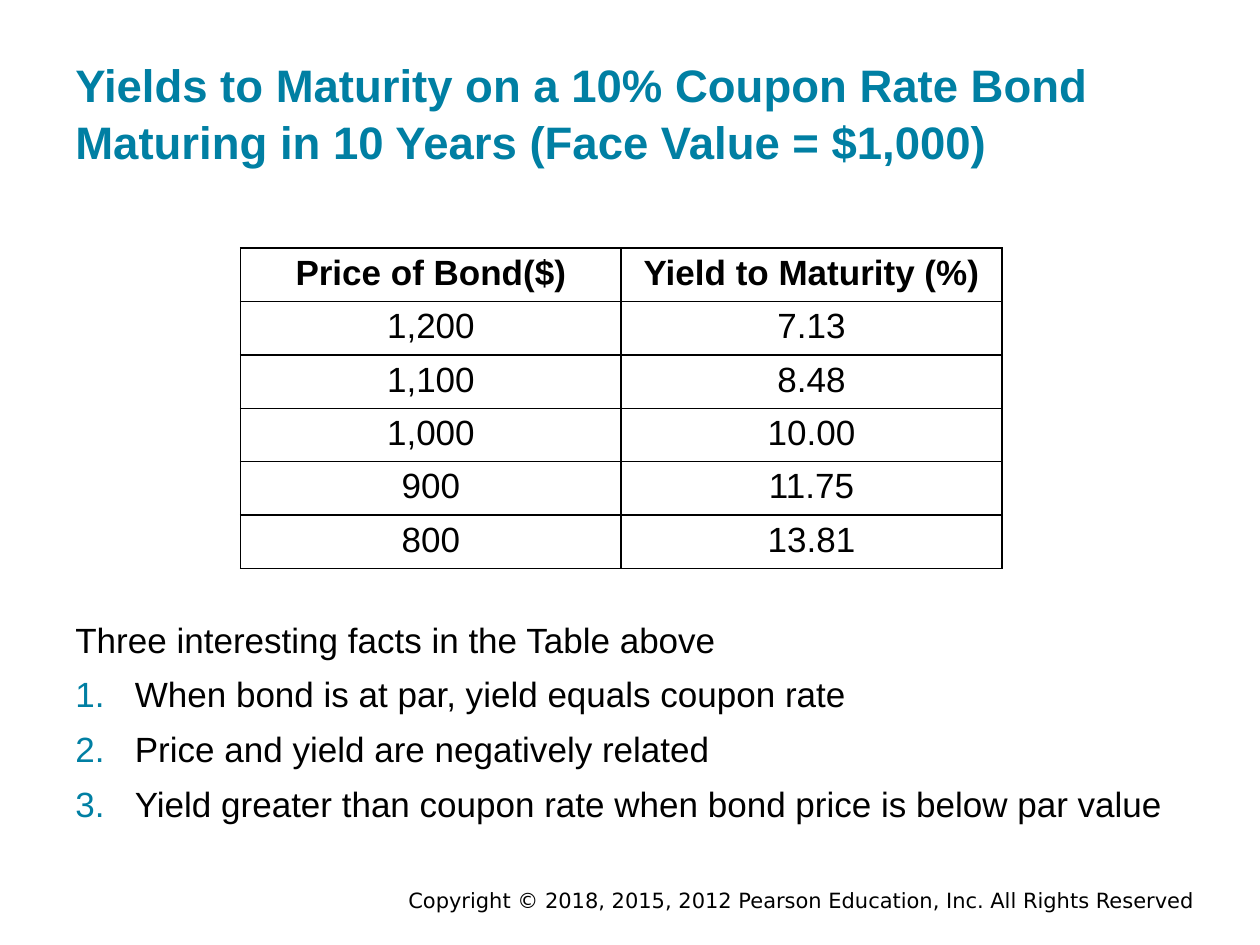
from dataclasses import dataclass

from lxml import etree
from pptx import Presentation
from pptx.dml.color import RGBColor
from pptx.enum.text import MSO_ANCHOR, PP_ALIGN
from pptx.oxml.ns import qn
from pptx.util import Pt

LEFT, CENTER, RIGHT = PP_ALIGN.LEFT, PP_ALIGN.CENTER, PP_ALIGN.RIGHT
TOP, MIDDLE, BOTTOM = MSO_ANCHOR.TOP, MSO_ANCHOR.MIDDLE, MSO_ANCHOR.BOTTOM


@dataclass(frozen=True)
class Theme:
    accent: str = "007FA3"
    ink: str = "000000"
    paper: str = "FFFFFF"
    font: str = "Arial"
    footer_font: str = "DejaVu Sans"
    title_size: int = 26
    body_size: int = 20
    footer_size: int = 12
    line_spacing: float = 1.05


class SlideBuilder:
    def __init__(self, slide, theme):
        self.slide = slide
        self.theme = theme

    def add_run(self, paragraph, text, size, color=None, bold=False, font=None):
        run = paragraph.add_run()
        run.text = text
        run.font.name = font or self.theme.font
        run.font.size = Pt(size)
        run.font.bold = bold
        run.font.color.rgb = RGBColor.from_string(color or self.theme.ink)

    def text_frame(self, box, anchor, inset):
        frame = self.slide.shapes.add_textbox(*map(Pt, box)).text_frame
        frame.word_wrap = True
        frame.vertical_anchor = anchor
        frame.margin_left = frame.margin_right = Pt(7.2)
        frame.margin_top = frame.margin_bottom = Pt(inset)
        return frame

    def title(self, text, box):
        paragraph = self.text_frame(box, BOTTOM, 7.2).paragraphs[0]
        paragraph.alignment = LEFT
        paragraph.line_spacing = self.theme.line_spacing
        self.add_run(paragraph, text, self.theme.title_size, self.theme.accent, True)

    def footer(self, text, box):
        paragraph = self.text_frame(box, MIDDLE, 3.6).paragraphs[0]
        paragraph.alignment = RIGHT
        self.add_run(paragraph, text, self.theme.footer_size, font=self.theme.footer_font)

    def numbered_list(self, lead, items, box):
        frame = self.text_frame(box, TOP, 7.2)
        for index, text in enumerate([lead, *items]):
            paragraph = frame.add_paragraph() if index else frame.paragraphs[0]
            paragraph.line_spacing = self.theme.line_spacing
            if index:
                paragraph.space_before = Pt(6)
                self.number(paragraph)
            self.add_run(paragraph, text, self.theme.body_size)

    def number(self, paragraph):
        properties = paragraph._p.get_or_add_pPr()
        properties.set("marL", str(Pt(34)))
        properties.set("indent", str(Pt(-34)))
        color = etree.SubElement(properties, qn("a:buClr"))
        etree.SubElement(color, qn("a:srgbClr"), val=self.theme.accent)
        etree.SubElement(properties, qn("a:buFont"), typeface=self.theme.font)
        etree.SubElement(properties, qn("a:buAutoNum"), type="arabicPeriod")

    def table(self, rows, left, top, column_width, row_height):
        columns = len(rows[0])
        table = self.slide.shapes.add_table(
            len(rows), columns, Pt(left), Pt(top),
            Pt(column_width * columns), Pt(row_height * len(rows))).table
        for column in table.columns:
            column.width = Pt(column_width)
        for row_index, values in enumerate(rows):
            for column_index, value in enumerate(values):
                self.cell(table.cell(row_index, column_index), value, row_index == 0)

    def cell(self, cell, text, bold):
        cell.margin_left = cell.margin_right = Pt(5)
        cell.margin_top = cell.margin_bottom = Pt(3.25)
        paragraph = cell.text_frame.paragraphs[0]
        paragraph.alignment = CENTER
        self.add_run(paragraph, text, self.theme.body_size, bold=bold)
        properties = cell._tc.get_or_add_tcPr()
        for side in ("a:lnL", "a:lnR", "a:lnT", "a:lnB"):
            line = etree.SubElement(properties, qn(side), w=str(Pt(1)))
            fill = etree.SubElement(line, qn("a:solidFill"))
            etree.SubElement(fill, qn("a:srgbClr"), val=self.theme.ink)
        cell.fill.solid()
        cell.fill.fore_color.rgb = RGBColor.from_string(self.theme.paper)


def main():
    presentation = Presentation()
    presentation.slide_width, presentation.slide_height = Pt(720), Pt(540)
    slide = presentation.slides.add_slide(presentation.slide_layouts[6])
    builder = SlideBuilder(slide, Theme())

    builder.footer(
        "Copyright © 2018, 2015, 2012 Pearson Education, Inc. All Rights Reserved",
        (126, 506.2, 563.8, 15.8))
    builder.title(
        "Yields to Maturity on a 10% Coupon Rate Bond "
        "Maturing in 10 Years (Face Value = $1,000)",
        (36, 17.3, 648, 86.4))
    builder.table([
        ("Price of Bond($)", "Yield to Maturity (%)"),
        ("1,200", "7.13"),
        ("1,100", "8.48"),
        ("1,000", "10.00"),
        ("900", "11.75"),
        ("800", "13.81"),
    ], left=137.5, top=141.8, column_width=217.5, row_height=29.5)
    builder.numbered_list("Three interesting facts in the Table above", [
        "When bond is at par, yield equals coupon rate",
        "Price and yield are negatively related",
        "Yield greater than coupon rate when bond price is below par value",
    ], (36, 344.9, 648, 131.8))

    presentation.save("out.pptx")


if __name__ == "__main__":
    main()
